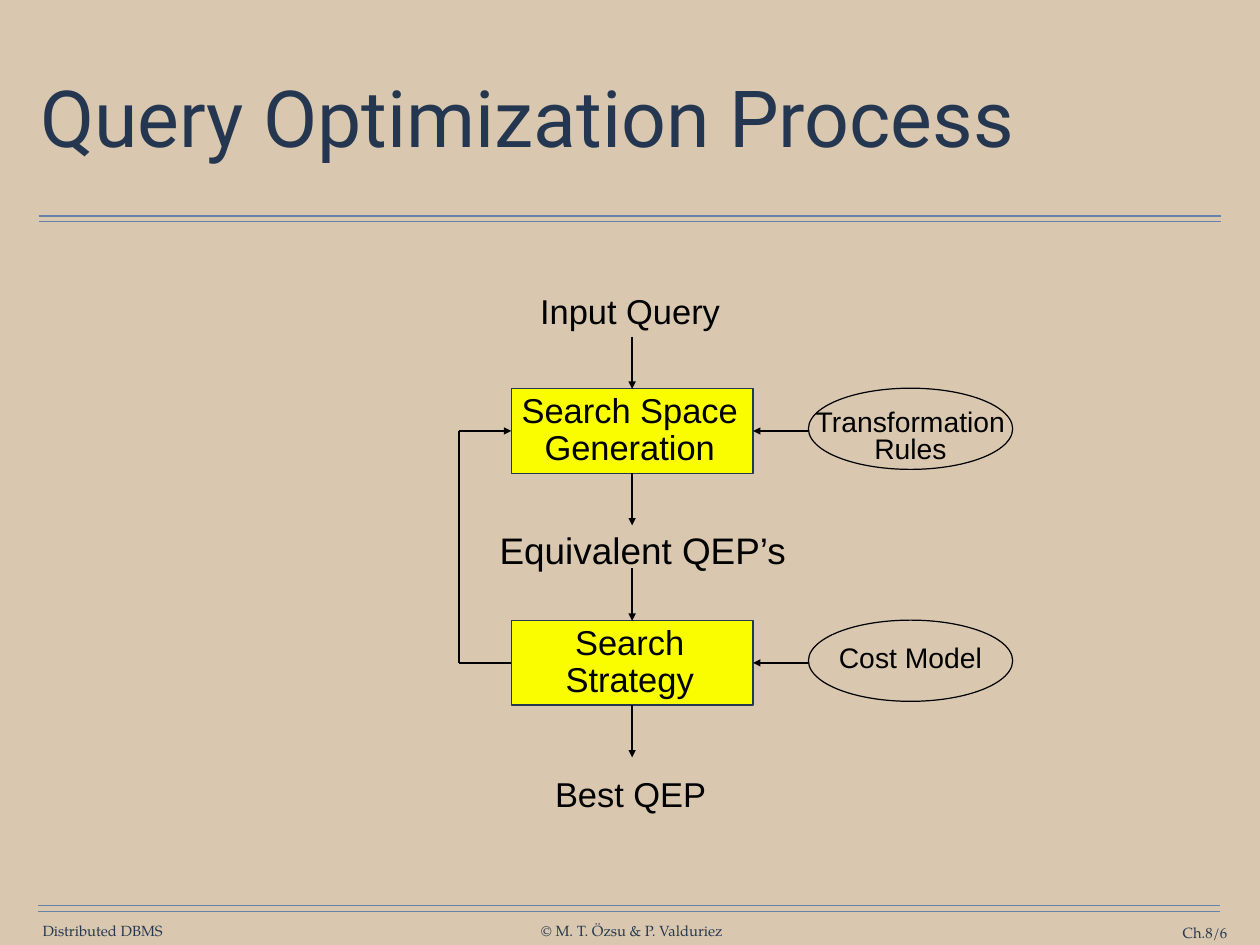
import pptx
import pptx.util
import pptx.dml.color
import pptx.enum.shapes
import pptx.enum.text
from dataclasses import dataclass
from lxml import etree

Pt = pptx.util.Pt
RGB = pptx.dml.color.RGBColor.from_string
SHAPE = pptx.enum.shapes.MSO_SHAPE
ALIGN = pptx.enum.text.PP_ALIGN
MIDDLE = pptx.enum.text.MSO_ANCHOR.MIDDLE
TOP, LEFT, BOTTOM, RIGHT = range(4)


@dataclass(frozen=True)
class Theme:
    background: str = "D9C8AF"
    title: str = "253750"
    navy: str = "263750"
    rule: str = "6682AA"
    step: str = "FAFD00"
    ink: str = "000000"
    title_font: str = "Roboto"
    body_font: str = "Arial"
    footer_font: str = "TeX Gyre Pagella"
    title_size: int = 64
    emphasis_size: int = 30
    body_size: int = 28
    input_size: int = 23
    footer_size: int = 12


T = Theme()

TITLE = "Query Optimization Process"
FOOTERS = [
    ("Distributed DBMS", 34, 749.5, 99, ALIGN.CENTER),
    ("© M. T. Özsu & P. Valduriez", 438.5, 749.5, 150, ALIGN.CENTER),
    ("Ch.8/6", 886.5, 751, 111, ALIGN.RIGHT),
]
RULES = [(31.5, 175.5), (31, 736)]
LABELS = [
    ("Input Query", 512, 252.5, 168, T.body_size),
    ("Equivalent QEP’s", 522.5, 447, 256, T.emphasis_size),
    ("Best QEP", 512.5, 645, 144, T.body_size),
]
STEPS = [
    ("Search Space\nGeneration", 316, "Transformation\nRules", 15),
    ("Search\nStrategy", 504.5, "Cost Model", 0),
]

STEP_LEFT, STEP_W, STEP_H = 415.5, 196.5, 68.5
STEP_SHIFT = 4
INPUT_LEFT, INPUT_W, INPUT_H = 657, 166, 66
RULE_W, RULE_GAP = 960.5, 4.5
ARROW = 42.5
LABEL_H, FOOTER_H = 44, 14

prs = pptx.Presentation()
prs.slide_width, prs.slide_height = Pt(1024), Pt(768)
s = prs.slides.add_slide(prs.slide_layouts[5])
s.background.fill.solid()
s.background.fill.fore_color.rgb = RGB(T.background)


def write(sp, text, font, size, color, align=ALIGN.CENTER, spacing=None, inset=0, wrap=False):
    tf = sp.text_frame
    tf.text = text
    tf.word_wrap = wrap
    tf.vertical_anchor = MIDDLE
    tf.margin_left = tf.margin_right = tf.margin_top = tf.margin_bottom = Pt(inset)
    for p in tf.paragraphs:
        p.alignment = align
        if spacing:
            p.line_spacing = spacing
        for r in p.runs:
            r.font.name, r.font.size = font, Pt(size)
            r.font.color.rgb = RGB(color)
    return tf


def add_text(x, y, w, h, *style, **options):
    return write(s.shapes.add_textbox(Pt(x), Pt(y), Pt(w), Pt(h)), *style, **options)


def add_node(kind, x, y, w, h, line, fill=None):
    sp = s.shapes.add_shape(kind, Pt(x), Pt(y), Pt(w), Pt(h))
    sp.shadow.inherit = False
    if fill:
        sp.fill.solid()
        sp.fill.fore_color.rgb = RGB(fill)
    else:
        sp.fill.background()
    sp.line.color.rgb = RGB(line)
    sp.line.width = Pt(1)
    return sp


def add_line(x1, y1, x2, y2, color=T.ink, width=1.5, arrow=False, begin=None, end=None):
    c = s.shapes.add_connector(
        pptx.enum.shapes.MSO_CONNECTOR.STRAIGHT, Pt(x1), Pt(y1), Pt(x2), Pt(y2))
    if begin:
        c.begin_connect(*begin)
    if end:
        c.end_connect(*end)
    c.line.color.rgb = RGB(color)
    c.line.width = Pt(width)
    ns = pptx.oxml.ns.qn
    if arrow:
        etree.SubElement(c.line._get_or_add_ln(), ns("a:tailEnd"), type="triangle")
    etree.SubElement(c._element.spPr, ns("a:effectLst"))


title = s.shapes.title
title.left, title.top, title.width, title.height = Pt(28), Pt(35.5), Pt(968), Pt(126.5)
write(title, TITLE, T.title_font, T.title_size, T.title, ALIGN.LEFT, 0.9, inset=4.5, wrap=True)

for x, y in RULES:
    for offset in (0, RULE_GAP):
        add_line(x, y + offset, x + RULE_W, y + offset, T.rule, 1)

for text, x, y, w, align in FOOTERS:
    add_text(x, y, w, FOOTER_H, text, T.footer_font, T.footer_size, T.navy, align)

for text, cx, cy, w, size in LABELS:
    add_text(cx - w / 2, cy - LABEL_H / 2, w, LABEL_H, text, T.body_font, size, T.ink)

center = STEP_LEFT + STEP_W / 2
loop = STEP_LEFT - ARROW
nodes, middles = [], []
for text, top, source, drop in STEPS:
    bottom, middle = top + STEP_H, top + STEP_H / 2
    step = add_node(SHAPE.RECTANGLE, STEP_LEFT, top, STEP_W, STEP_H, T.navy, T.step)
    tf = write(step, text, T.body_font, T.body_size, T.ink, spacing=0.9)
    tf.margin_right = Pt(STEP_SHIFT)
    oval = add_node(SHAPE.OVAL, INPUT_LEFT, top - 0.5, INPUT_W, INPUT_H, T.ink)
    tf = write(oval, source, T.body_font, T.input_size, T.ink, spacing=0.8)
    tf.margin_top = Pt(drop)
    add_line(center, top - ARROW, center, top, arrow=True, end=(step, TOP))
    add_line(center, bottom, center, bottom + ARROW, arrow=True, begin=(step, BOTTOM))
    add_line(INPUT_LEFT, middle, STEP_LEFT + STEP_W, middle, arrow=True, end=(step, RIGHT))
    nodes.append(step)
    middles.append(middle)

generation, strategy = nodes
upper, lower = middles
add_line(STEP_LEFT, lower, loop, lower, begin=(strategy, LEFT))
add_line(loop, lower, loop, upper)
add_line(loop, upper, STEP_LEFT, upper, arrow=True, end=(generation, LEFT))

prs.save("out.pptx")
